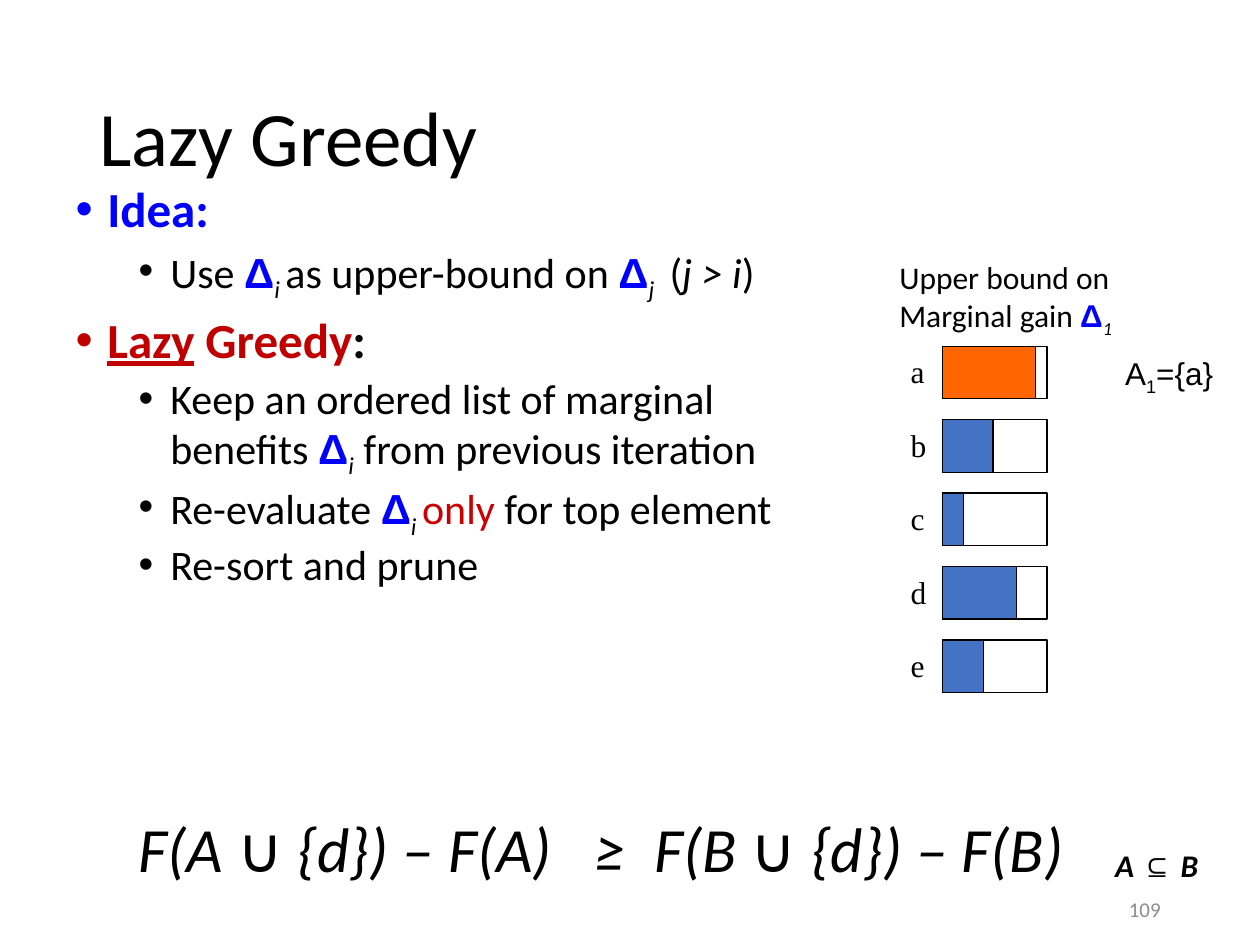
from lxml.etree import SubElement
from pptx import Presentation
from pptx.dml.color import RGBColor
from pptx.enum.shapes import MSO_SHAPE
from pptx.enum.text import MSO_ANCHOR as Anchor, MSO_AUTO_SIZE as AutoSize, PP_ALIGN as Align
from pptx.oxml.ns import qn
from pptx.util import Cm, Pt

BLACK, BLUE, DARK_RED, RED = "000000", "0000FF", "C00000", "CC0000"
GREY, BAR_BLUE, BAR_ORANGE = "8C8C8C", "4472C4", "FF6600"
DELTA = ("Δ", "b", BLUE, "Arial")


def add_runs(paragraph, runs, size, font="Calibri"):
    """Add (text, style, colour, font) runs; style letters: b, i, u, s (subscript)."""
    for text, style, colour, run_font in [(*run, *("", BLACK, font)[len(run) - 1:]) for run in runs]:
        if text == "\n":
            paragraph.add_line_break()
            continue
        run = paragraph.add_run()
        run.text = text
        run.font.name, run.font.size = run_font, Pt(size)
        run.font.bold, run.font.italic = "b" in style, "i" in style
        run.font.underline = "u" in style
        run.font.color.rgb = RGBColor.from_string(colour)
        if "s" in style:
            run.font._element.set("baseline", "-25000")


def add_text(left, top, width, height, runs, size=18, font="Calibri", wrap=False):
    box = slide.shapes.add_textbox(Cm(left), Cm(top), Cm(width), Cm(height))
    box.text_frame.word_wrap = wrap
    paragraph = box.text_frame.paragraphs[0]
    add_runs(paragraph, runs, size, font)
    return paragraph


presentation = Presentation()
presentation.slide_width, presentation.slide_height = Cm(25.4), Cm(19.05)
slide = presentation.slides.add_slide(presentation.slide_layouts[1])

# Title
title = slide.shapes.title
title.left, title.top, title.width, title.height = Cm(1.75), Cm(1.02), Cm(21.9), Cm(3.68)
title.text_frame.vertical_anchor = Anchor.MIDDLE
title.text_frame.auto_size = AutoSize.NONE
paragraph = title.text_frame.paragraphs[0]
paragraph.alignment, paragraph.line_spacing = Align.LEFT, 0.9
add_runs(paragraph, [("Lazy Greedy",)], 44)

# Bulleted list
body = slide.placeholders[1]
body.left, body.top, body.width, body.height = Cm(1.27), Cm(3.61), Cm(16.3), Cm(14.6)
body.text_frame.auto_size = AutoSize.NONE
items = [
    (0, [("Idea:", "b", BLUE)]),
    (1, [("Use ",), DELTA, ("i ", "is"), ("as upper-bound on ",), DELTA, ("j ", "is"),
         (" (",), ("j > i", "i"), (")",)]),
    (0, [("Lazy", "bu", DARK_RED), (" Greedy", "b", DARK_RED), (":", "b")]),
    (1, [("Keep an ordered list of marginal benefits ",), DELTA, ("i", "is"),
         (" from previous iteration",)]),
    (1, [("Re-evaluate ",), DELTA, ("i ", "is"), ("only ", "", RED), ("for top element",)]),
    (1, [("Re-sort and prune",)]),
]
for index, (level, runs) in enumerate(items):
    paragraph = body.text_frame.add_paragraph() if index else body.text_frame.paragraphs[0]
    paragraph.level = level
    paragraph.line_spacing, paragraph.space_before = 0.9, Pt(5 if level else 10)
    properties = paragraph._p.get_or_add_pPr()
    properties.set("marL", str(Cm(1.91 if level else 0.64)))
    properties.set("indent", str(-Cm(0.64)))
    SubElement(properties, qn("a:buFont"), typeface="Arial")
    SubElement(properties, qn("a:buChar"), char="•")
    add_runs(paragraph, runs, 24 if level else 28)

# Bars of marginal gain
add_text(17.88, 5.08, 5, 1.8, [("Upper bound on",), ("\n",), ("Marginal gain ",), DELTA, ("1", "is")])
bar_left, bar_top, bar_pitch, bar_width, bar_height = 19, 6.98, 1.48, 2.11, 1.06
gains = [("a", 1.88, BAR_ORANGE), ("b", 1.02, BAR_BLUE), ("c", 0.43, BAR_BLUE),
         ("d", 1.5, BAR_BLUE), ("e", 0.83, BAR_BLUE)]
for row, (label, gain, colour) in enumerate(gains):
    top = bar_top + row * bar_pitch
    add_text(18.11, top, 0.82, 1.02, [(label,)], font="Times New Roman")
    for width, fill in ((bar_width, None), (gain, colour)):
        bar = slide.shapes.add_shape(MSO_SHAPE.RECTANGLE, Cm(bar_left), Cm(top), Cm(width), Cm(bar_height))
        bar.shadow.inherit = False
        bar.line.color.rgb, bar.line.width = RGBColor.from_string(BLACK), Pt(0.75)
        if fill:
            bar.fill.solid()
            bar.fill.fore_color.rgb = RGBColor.from_string(fill)
        else:
            bar.fill.background()
add_text(22.43, 7.01, 2.34, 1.02, [("A",), ("1", "s"), ("={a}",)], font="Arial")

# Submodularity condition, with tab stops around the relation sign
formula = add_text(2.54, 16.2, 21.16, 1.8, [("F(A ∪ {d}) – F(A)\t≥\tF(B ∪ {d}) – F(B)", "i")], 36, wrap=True)
tab_list = SubElement(formula._p.get_or_add_pPr(), qn("a:tabLst"))
for position in (9.2, 10.4):
    SubElement(tab_list, qn("a:tab"), pos=str(Cm(position)), algn="l")
add_text(22.23, 16.94, 2.21, 1.02, [("A ", "bi"), ("⊆ ", "b", BLACK, "Times New Roman"), ("B", "bi")])

page_number = add_text(17.93, 17.95, 5.72, 1.02, [("109", "", GREY)], 12, wrap=True)
page_number.alignment = Align.RIGHT

presentation.save("out.pptx")
